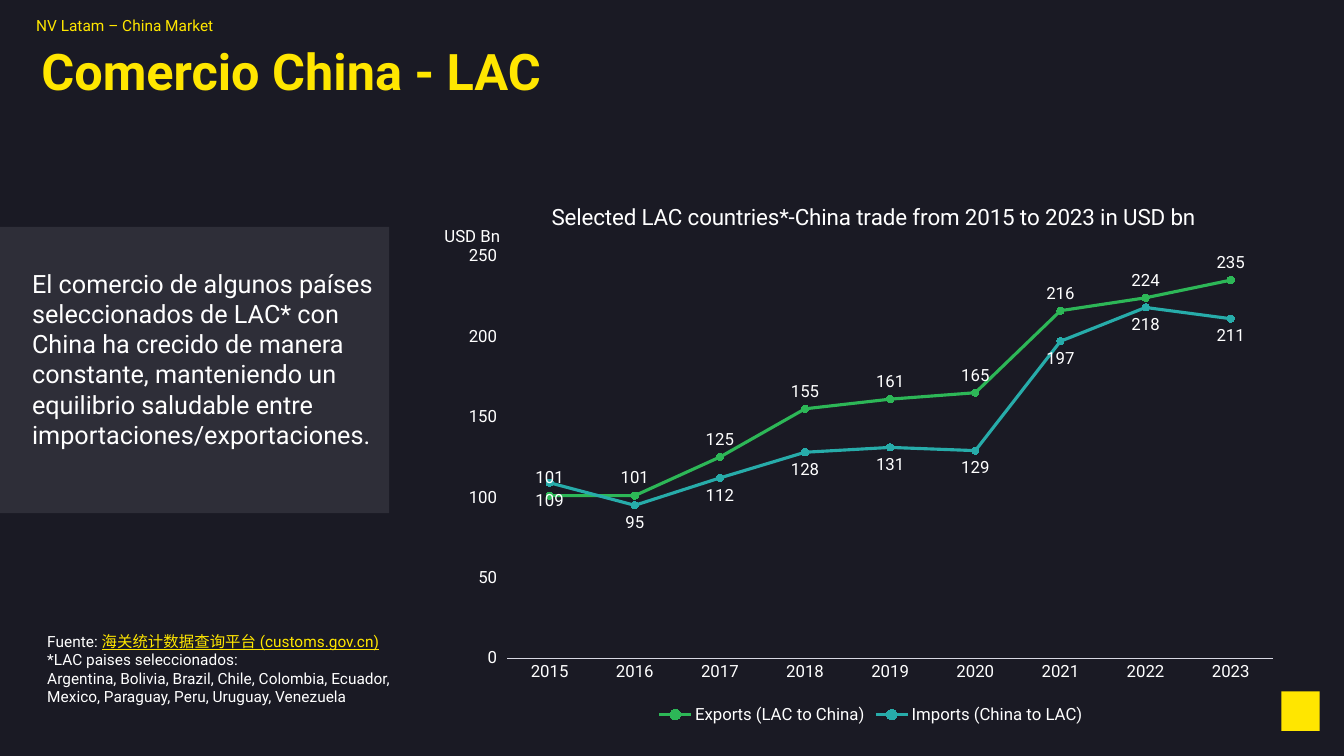
from dataclasses import dataclass

from lxml import etree
from pptx import Presentation
from pptx.chart.data import CategoryChartData
from pptx.dml.color import RGBColor
from pptx.enum.chart import (
    XL_CHART_TYPE as ChartType,
    XL_LABEL_POSITION as LabelPos,
    XL_LEGEND_POSITION as LegendPos,
    XL_MARKER_STYLE as Marker,
    XL_TICK_MARK as Tick,
)
from pptx.enum.shapes import MSO_SHAPE as Shape
from pptx.oxml.ns import qn
from pptx.util import Inches, Pt

Box = tuple[float, float, float, float]


@dataclass(frozen=True)
class Theme:
    font: str = "Roboto"
    background: str = "1A1A24"
    panel: str = "2E2E38"
    accent: str = "FFE600"
    text: str = "FFFFFF"
    axis: str = "D8D8E3"
    exports: str = "2DB757"
    imports: str = "27ACAA"
    small: int = 11
    label: int = 12
    chart_title: int = 16
    body: int = 18
    title: int = 36


@dataclass(frozen=True)
class Run:
    text: str
    size: int
    color: str
    bold: bool = False
    underline: bool = False


@dataclass(frozen=True)
class TextBox:
    box: Box
    paragraphs: list[list[Run]]
    wrap: bool = True
    inset: bool = True
    spacing: float = 1.0


@dataclass(frozen=True)
class Trade:
    name: str
    values: tuple[int, ...]
    color: str
    position: LabelPos


THEME = Theme()
CHART_BOX: Box = (4.48, 1.82, 8.32, 5.41)
PLOT_BOX: Box = (5.03, 2.54, 7.6, 3.99)
CHART_TITLE_AT = (5.43, 1.97)
PANEL_BOX: Box = (0, 2.25, 3.86, 2.84)
BADGE_BOX: Box = (12.71, 6.86, 0.38, 0.39)
YEARS = [str(year) for year in range(2015, 2024)]
TRADES = [
    Trade("Exports (LAC to China)", (101, 101, 125, 155, 161, 165, 216, 224, 235),
          THEME.exports, LabelPos.ABOVE),
    Trade("Imports (China to LAC)", (109, 95, 112, 128, 131, 129, 197, 218, 211),
          THEME.imports, LabelPos.BELOW),
]
TEXTS = [
    TextBox((0.26, 0.11, 2.08, 0.29),
            [[Run("NV Latam – China Market", THEME.small, THEME.accent)]], wrap=False),
    TextBox((0.41, 0.49, 11.45, 0.7),
            [[Run("Comercio China - LAC", THEME.title, THEME.accent, bold=True)]],
            inset=False, spacing=0.85),
    TextBox((4.31, 2.19, 0.96, 0.3),
            [[Run("USD Bn", THEME.label, THEME.text)]], wrap=False),
    TextBox((0.22, 2.61, 3.64, 1.92),
            [[Run("El comercio de algunos países seleccionados de LAC* con China ha "
                  "crecido de manera constante, manteniendo un equilibrio saludable "
                  "entre importaciones/exportaciones.", THEME.body, THEME.text)]]),
    TextBox((0.37, 6.22, 3.75, 1.21), [
        [Run("Fuente: ", THEME.small, THEME.text),
         Run("海关统计数据查询平台 (customs.gov.cn)", THEME.small, THEME.accent,
             underline=True)],
        [Run("*LAC paises seleccionados:", THEME.small, THEME.text)],
        [Run("Argentina, Bolivia, Brazil, Chile, Colombia, Ecuador, Mexico, "
             "Paraguay, Peru, Uruguay, Venezuela", THEME.small, THEME.text)],
    ]),
]


def rgb(color: str) -> RGBColor:
    return RGBColor.from_string(color)


def style_font(font, size: int, color: str, bold: bool = False) -> None:
    font.name = THEME.font
    font.size = Pt(size)
    font.bold = bold
    font.color.rgb = rgb(color)


def add_rect(s, box: Box, color: str) -> None:
    sp = s.shapes.add_shape(Shape.RECTANGLE, *map(Inches, box))
    sp.shadow.inherit = False
    sp.fill.solid()
    sp.fill.fore_color.rgb = rgb(color)
    sp.line.fill.background()


def add_text(s, item: TextBox) -> None:
    tf = s.shapes.add_textbox(*map(Inches, item.box)).text_frame
    tf.word_wrap = item.wrap
    if not item.inset:
        tf.margin_left = tf.margin_right = tf.margin_top = tf.margin_bottom = 0
    for i, runs in enumerate(item.paragraphs):
        p = tf.add_paragraph() if i else tf.paragraphs[0]
        p.line_spacing = item.spacing
        for run in runs:
            r = p.add_run()
            r.text = run.text
            style_font(r.font, run.size, run.color, run.bold)
            r.font.underline = run.underline


def set_layout(element, index: int, place: tuple[float, ...], **modes: str) -> None:
    for old in element.findall(qn("c:layout")):
        element.remove(old)
    left, top, width, height = CHART_BOX
    offsets = (left, top, 0, 0)
    extents = (width, height, width, height)
    shares = {name: (value - offset) / extent for name, value, offset, extent
              in zip("xywh", place, offsets, extents)}
    layout = etree.Element(qn("c:layout"))
    manual = etree.SubElement(layout, qn("c:manualLayout"))
    for name, value in {**modes, "xMode": "edge", "yMode": "edge", **shares}.items():
        etree.SubElement(manual, qn(f"c:{name}")).set("val", str(value))
    element.insert(index, layout)


def add_trade_chart(s) -> None:
    data = CategoryChartData(number_format="0")
    data.categories = YEARS
    for trade in TRADES:
        data.add_series(trade.name, trade.values)
    box = map(Inches, CHART_BOX)
    chart = s.shapes.add_chart(ChartType.LINE_MARKERS, *box, data).chart
    style_font(chart.font, THEME.label, THEME.text)

    chart.has_title = True
    title = chart.chart_title
    r = title.text_frame.paragraphs[0].add_run()
    r.text = "Selected LAC countries*-China trade from 2015 to 2023 in USD bn"
    style_font(r.font, THEME.chart_title, THEME.text)
    set_layout(title._element, 1, CHART_TITLE_AT)
    set_layout(chart._chartSpace.chart.plotArea, 0, PLOT_BOX, layoutTarget="inner")

    chart.has_legend = True
    chart.legend.position = LegendPos.BOTTOM
    chart.legend.include_in_layout = False
    style_font(chart.legend.font, THEME.label, THEME.text)

    years, amounts = chart.category_axis, chart.value_axis
    for axis in (years, amounts):
        axis.has_major_gridlines = False
        style_font(axis.tick_labels.font, THEME.label, THEME.text)
    years.major_tick_mark = Tick.NONE
    years.format.line.color.rgb = rgb(THEME.axis)
    years.format.line.width = Pt(0.75)
    amounts.minimum_scale, amounts.maximum_scale = 0, 250
    amounts.major_unit = 50
    amounts.major_tick_mark = Tick.OUTSIDE
    amounts.format.line.fill.background()
    amounts.tick_labels.number_format = "0"
    amounts.tick_labels.number_format_is_linked = False

    chart.plots[0].vary_by_categories = False
    for series, trade in zip(chart.plots[0].series, TRADES):
        series.smooth = False
        series.format.line.color.rgb = rgb(trade.color)
        series.format.line.width = Pt(2.25)
        series.marker.style = Marker.CIRCLE
        series.marker.size = 5
        series.marker.format.fill.solid()
        series.marker.format.fill.fore_color.rgb = rgb(trade.color)
        series.marker.format.line.color.rgb = rgb(trade.color)
        labels = series.data_labels
        labels.show_value = True
        labels.position = trade.position
        style_font(labels.font, THEME.label, THEME.text)


def main() -> None:
    prs = Presentation()
    prs.slide_width, prs.slide_height = Inches(13.33), Inches(7.5)
    s = prs.slides.add_slide(prs.slide_layouts[6])
    s.background.fill.solid()
    s.background.fill.fore_color.rgb = rgb(THEME.background)
    add_rect(s, BADGE_BOX, THEME.accent)
    add_rect(s, PANEL_BOX, THEME.panel)
    add_trade_chart(s)
    for item in TEXTS:
        add_text(s, item)
    prs.save("out.pptx")


if __name__ == "__main__":
    main()
